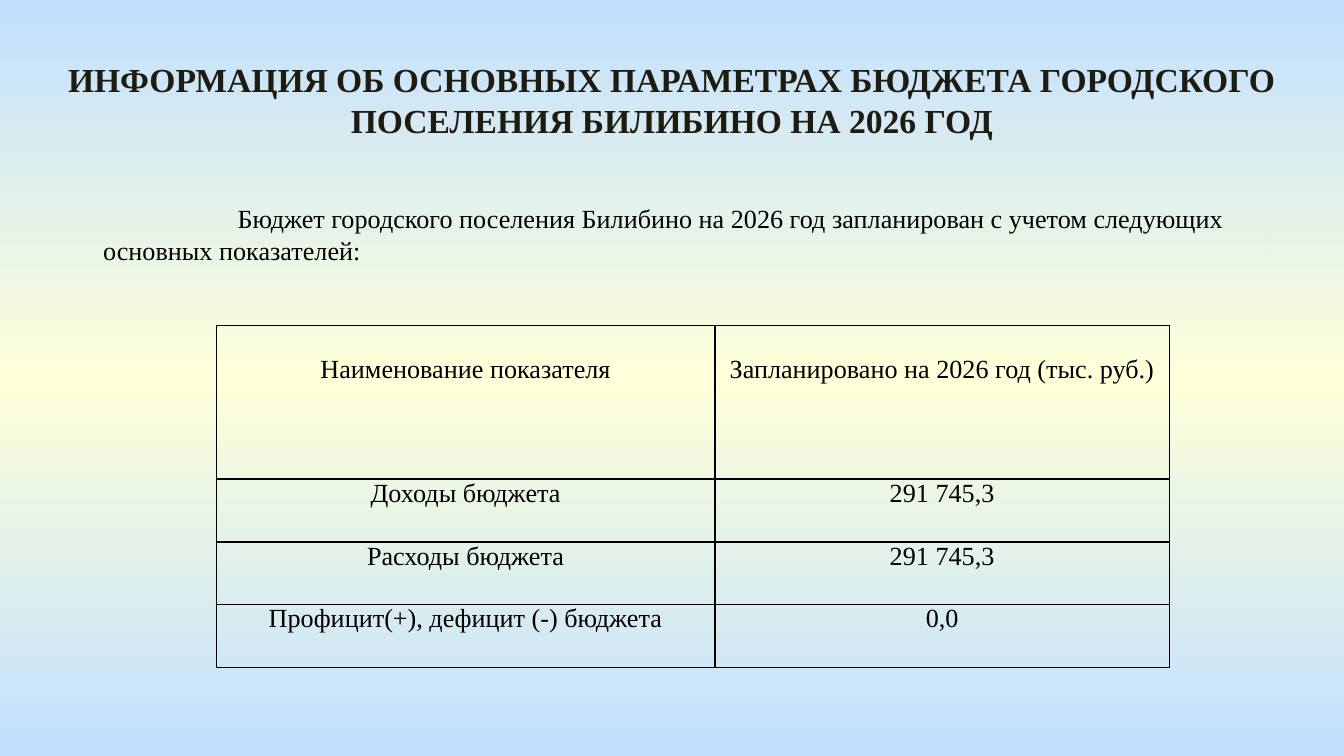
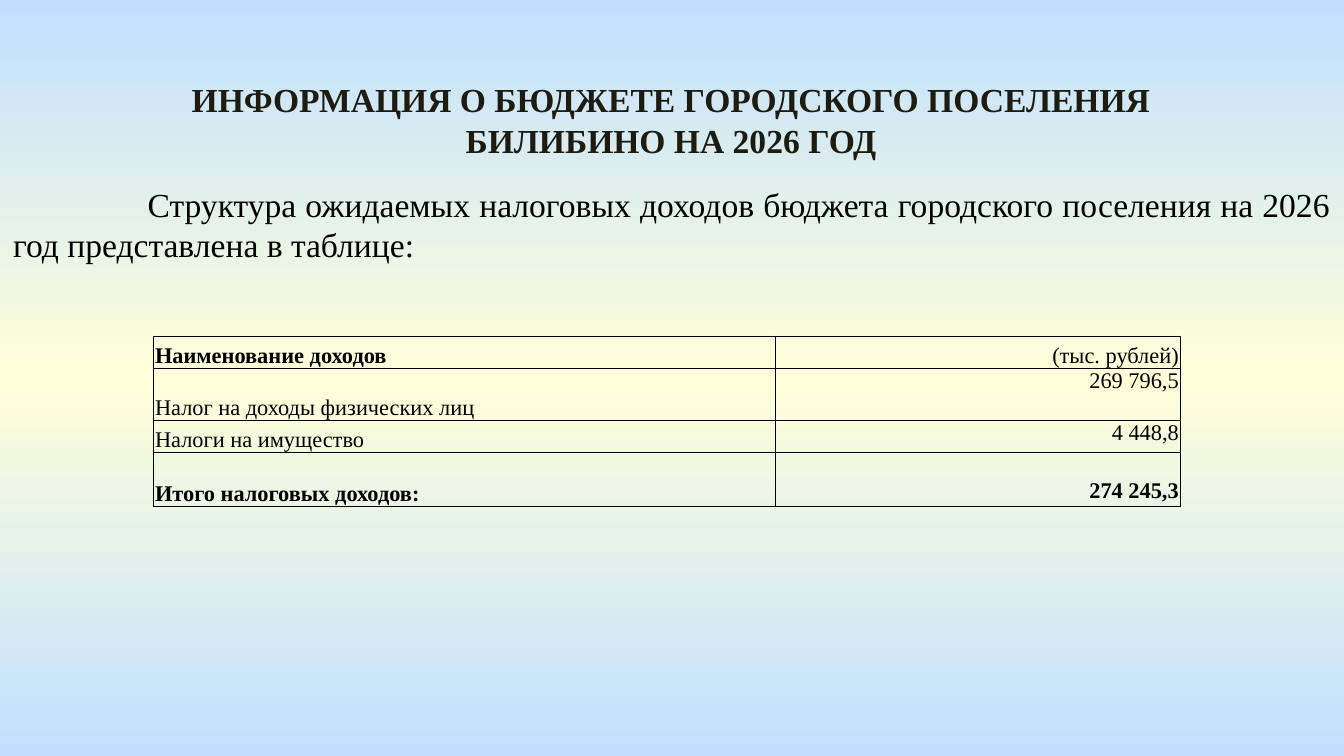
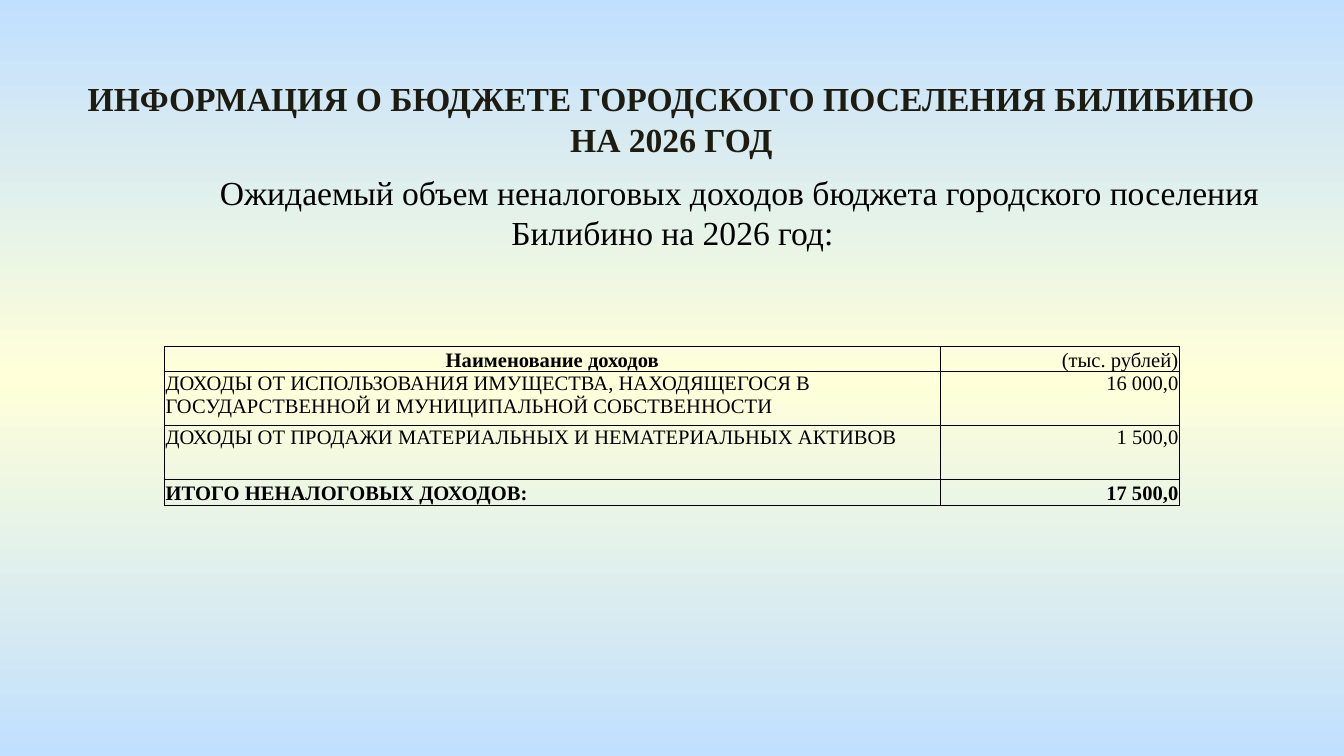
from copy import deepcopy

from lxml import etree
from pptx import Presentation
from pptx import util as u
from pptx.dml.color import RGBColor
from pptx.enum import shapes, text
from pptx.oxml.ns import qn

COLORS = {"sky": "C1E0FF", "cream": "FFFFD9", "title": "1E1C11", "text": "000000"}
FONT = "Times New Roman"
TITLE_ONLY = 5
FIRST_LINE = 2.54
LEFT, CENTER, RIGHT, JUSTIFY = (
    text.PP_ALIGN.LEFT, text.PP_ALIGN.CENTER, text.PP_ALIGN.RIGHT, text.PP_ALIGN.JUSTIFY)
TOP, BOTTOM = text.MSO_ANCHOR.TOP, text.MSO_ANCHOR.BOTTOM


def rgb(name):
    return RGBColor.from_string(COLORS[name])


def set_background(master):
    """Vertical sky-cream-sky gradient shared by all slides."""
    fill = master.background.fill
    fill.gradient()
    fill.gradient_angle = 270
    stops = master.element.find(".//" + qn("a:gsLst"))
    stops.append(deepcopy(stops[0]))
    for stop, name, pos in zip(fill.gradient_stops, ("sky", "cream", "sky"), (0, 0.5, 1)):
        stop.color.rgb = rgb(name)
        stop.position = pos


def format_text(p, size, align, color="text", bold=False):
    p.alignment = align
    for r in p.runs:
        r.font.name = FONT
        r.font.size = u.Pt(size)
        r.font.bold = bold
        r.font.color.rgb = rgb(color)


def place(sp, left, top, width, height):
    sp.left, sp.top, sp.width, sp.height = (u.Cm(v) for v in (left, top, width, height))


def add_titled_slide(prs, title, *box):
    slide = prs.slides.add_slide(prs.slide_layouts[TITLE_ONLY])
    sp = slide.shapes.title
    place(sp, *box)
    tf = sp.text_frame
    tf.text = title
    tf.vertical_anchor = TOP
    tf.auto_size = text.MSO_AUTO_SIZE.SHAPE_TO_FIT_TEXT
    format_text(tf.paragraphs[0], 18, CENTER, "title", True)
    return slide


def fill_intro(sp, intro, size, align):
    """Introductory paragraph with an indented first line."""
    tf = sp.text_frame
    tf.word_wrap = True
    tf.auto_size = text.MSO_AUTO_SIZE.SHAPE_TO_FIT_TEXT
    tf.vertical_anchor = TOP
    tf.text = intro
    p = tf.paragraphs[0]
    format_text(p, size, align)
    p._p.get_or_add_pPr().set("indent", str(u.Cm(FIRST_LINE)))


def add_intro(slide, intro, align, *box):
    sp = slide.shapes.add_textbox(*(u.Cm(v) for v in box))
    fill_intro(sp, intro, 18, align)


def add_intro_panel(slide, intro, *box):
    """Rectangle that shows the slide background as its fill."""
    sp = slide.shapes.add_shape(shapes.MSO_SHAPE.RECTANGLE, *(u.Cm(v) for v in box))
    sp.shadow.inherit = False
    sp.line.fill.background()
    sp._element.set("useBgFill", "1")
    fill_intro(sp, intro, 14, LEFT)


def set_borders(cell, width):
    tcPr = cell._tc.get_or_add_tcPr()
    for i, side in enumerate(("lnL", "lnR", "lnT", "lnB")):
        ln = etree.Element(qn("a:" + side), w=str(u.Pt(width)))
        fill = etree.SubElement(ln, qn("a:solidFill"))
        etree.SubElement(fill, qn("a:srgbClr"), val=COLORS["text"])
        tcPr.insert(i, ln)


def add_budget_table(slide, left, top, widths, heights, rows, size, aligns, border, inset):
    frame = slide.shapes.add_table(
        len(rows), len(widths), u.Cm(left), u.Cm(top), u.Cm(sum(widths)), u.Cm(sum(heights)))
    table = frame.table
    table.first_row = table.horz_banding = False
    for column, width in zip(table.columns, widths):
        column.width = u.Cm(width)
    for row, height, values in zip(table.rows, heights, rows):
        row.height = u.Cm(height)
        for cell, value, align in zip(row.cells, values, aligns):
            cell.text = value
            cell.margin_left = cell.margin_right = u.Cm(inset)
            cell.margin_top = cell.margin_bottom = 0
            cell.vertical_anchor = TOP
            cell.fill.background()
            set_borders(cell, border)
            format_text(cell.text_frame.paragraphs[0], size, align)
    return table


def anchor_bottom(*cells):
    for cell in cells:
        cell.vertical_anchor = BOTTOM


def make_bold(*cells):
    for cell in cells:
        cell.text_frame.paragraphs[0].runs[0].font.bold = True


def main():
    prs = Presentation()
    prs.slide_width, prs.slide_height = u.Cm(25.4), u.Cm(14.29)
    set_background(prs.slide_master)

    # Main budget figures
    slide = add_titled_slide(
        prs, "ИНФОРМАЦИЯ ОБ ОСНОВНЫХ ПАРАМЕТРАХ БЮДЖЕТА ГОРОДСКОГО ПОСЕЛЕНИЯ БИЛИБИНО НА 2026 ГОД",
        0.89, 0.99, 23.62, 1.8)
    add_intro_panel(
        slide, "Бюджет городского поселения Билибино на 2026 год запланирован с учетом "
        "следующих основных показателей:", 1.7, 3.71, 22.2, 1.63)
    table = add_budget_table(
        slide, 4.09, 6.15, (9.42, 8.59), (2.9, 1.19, 1.19, 1.19),
        [("Наименование показателя", "Запланировано на 2026 год (тыс. руб.)"),
         ("Доходы бюджета", "291 745,3"),
         ("Расходы бюджета", "291 745,3"),
         ("Профицит(+), дефицит (-) бюджета", "0,0")],
        14, (CENTER, CENTER), 1, 0.18)
    for cell in table.rows[0].cells:
        cell.margin_top = u.Cm(0.57)

    # Tax revenues
    budget_title = "ИНФОРМАЦИЯ О БЮДЖЕТЕ ГОРОДСКОГО ПОСЕЛЕНИЯ БИЛИБИНО НА 2026 ГОД"
    slide = add_titled_slide(prs, budget_title, 2.87, 1.37, 19.63, 1.8)
    add_intro(
        slide, "Структура ожидаемых налоговых доходов бюджета городского поселения "
        "на 2026 год представлена в таблице:", JUSTIFY, 0, 3.35, 25.4, 1.8)
    header = ("Наименование доходов", "(тыс. рублей)")
    table = add_budget_table(
        slide, 2.9, 6.35, (11.76, 7.65), (0.61, 0.99, 0.61, 1.02),
        [header,
         ("Налог на доходы физических лиц", "269 796,5"),
         ("Налоги на имущество", "4 448,8"),
         ("Итого налоговых доходов:", "274 245,3")],
        12, (JUSTIFY, RIGHT), 0.5, 0.03)
    anchor_bottom(table.cell(0, 1), *(row.cells[0] for row in table.rows))
    make_bold(table.cell(0, 0), *table.rows[3].cells)
    table.cell(3, 1).margin_top = u.Cm(0.49)

    # Non-tax revenues
    slide = add_titled_slide(prs, budget_title, 0.99, 1.35, 23.4, 1.8)
    add_intro(
        slide, "Ожидаемый объем неналоговых доходов бюджета городского поселения "
        "Билибино на 2026 год:", CENTER, 0.66, 3.12, 24.1, 1.8)
    table = add_budget_table(
        slide, 3.1, 6.55, (14.68, 4.52), (0.48, 1.02, 1.02, 0.48),
        [header,
         ("ДОХОДЫ ОТ ИСПОЛЬЗОВАНИЯ ИМУЩЕСТВА, НАХОДЯЩЕГОСЯ В ГОСУДАРСТВЕННОЙ "
          "И МУНИЦИПАЛЬНОЙ СОБСТВЕННОСТИ", "16 000,0"),
         ("ДОХОДЫ ОТ ПРОДАЖИ МАТЕРИАЛЬНЫХ И НЕМАТЕРИАЛЬНЫХ АКТИВОВ", "1 500,0"),
         ("ИТОГО НЕНАЛОГОВЫХ ДОХОДОВ:", "17 500,0")],
        11, (LEFT, RIGHT), 0.5, 0.03)
    anchor_bottom(*table.rows[0].cells, *table.rows[3].cells)
    make_bold(table.cell(0, 0), *table.rows[3].cells)
    table.cell(0, 0).text_frame.paragraphs[0].alignment = CENTER

    prs.save("out.pptx")


if __name__ == "__main__":
    main()
